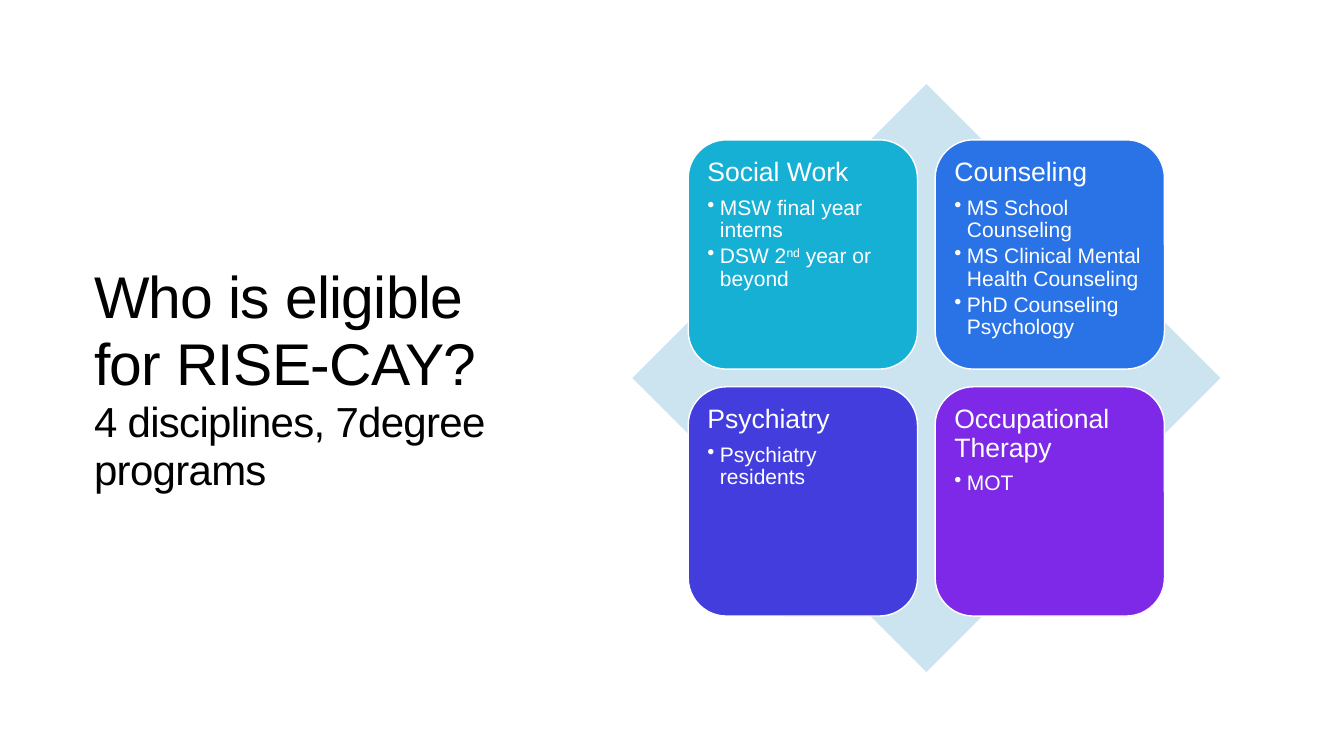
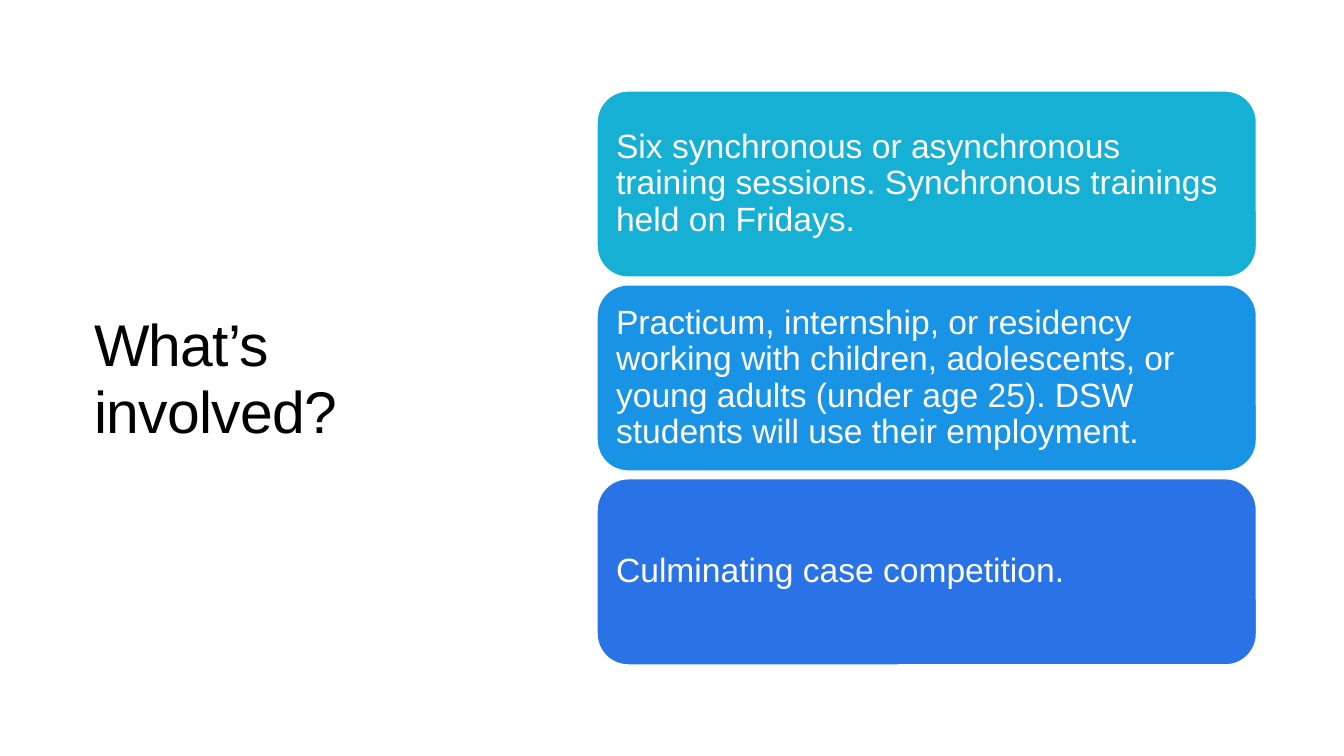
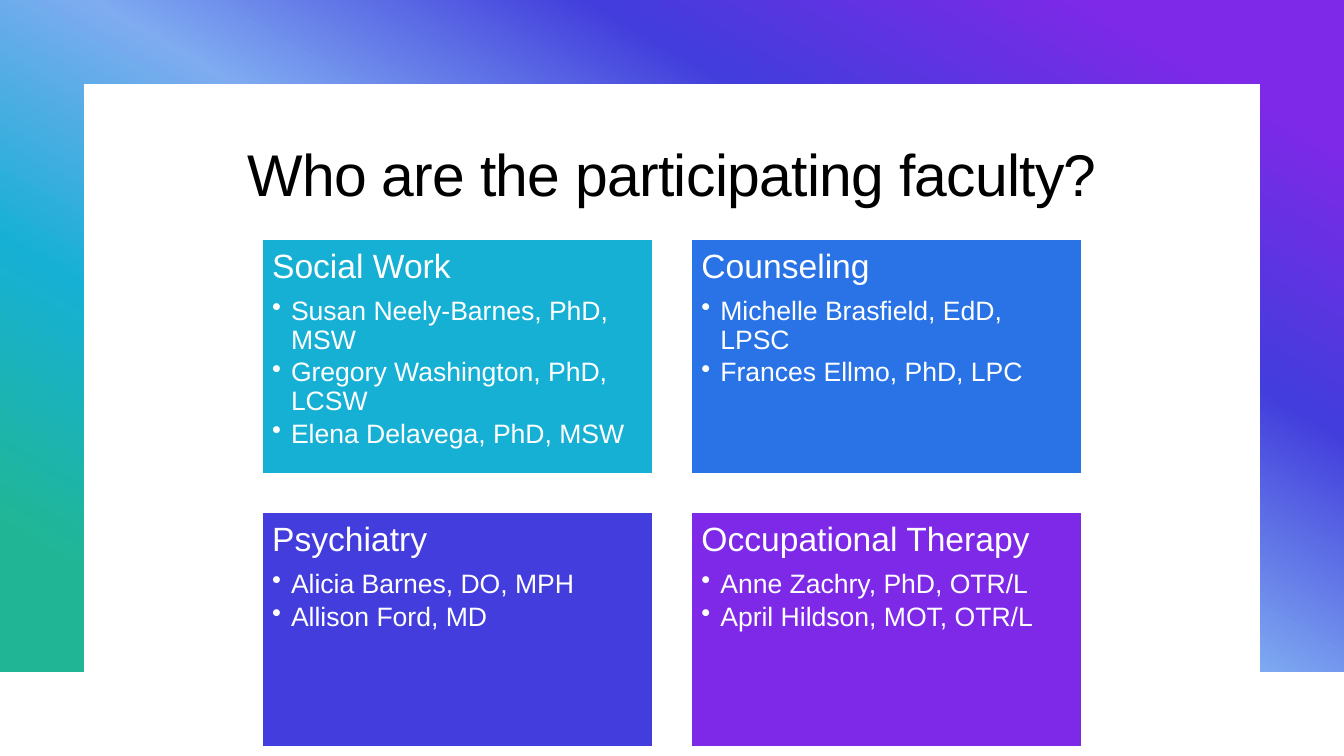
from copy import deepcopy

from pptx import Presentation
from pptx.dml.color import RGBColor
from pptx.enum import shapes, text
from pptx.oxml import ns
from pptx.util import Pt

WHITE = RGBColor(0xFF, 0xFF, 0xFF)
BLACK = RGBColor(0x00, 0x00, 0x00)
TEAL = RGBColor(0x17, 0xB0, 0xD5)
SKY = RGBColor(0x19, 0x93, 0xE5)
BLUE = RGBColor(0x29, 0x73, 0xE7)
INDIGO = RGBColor(0x42, 0x3D, 0xDC)
PURPLE = RGBColor(0x7E, 0x29, 0xE7)
PERIWINKLE = RGBColor(0x7F, 0xAB, 0xF1)
GREEN = RGBColor(0x20, 0xB6, 0x95)
PALE_BLUE = RGBColor(0xCC, 0xE4, 0xEF)

FONT = "Arial"
SLIDE_WIDTH, SLIDE_HEIGHT = 960, 540
SIDE_TITLE_BOX = (60, 61, 307.5, 420.5)
TOP_TITLE_BOX = (120, 89.5, 720, 72.5)
GRADIENT = [(0.1, PURPLE), (0.3, INDIGO), (0.5, PERIWINKLE), (0.7, TEAL), (0.9, GREEN)]

# Discipline, colour, eligible programs (^ marks superscript), faculty
DISCIPLINES = [
    ("Social Work", TEAL,
     ["MSW final year interns", "DSW 2^nd^ year or beyond"],
     ["Susan Neely-Barnes, PhD, MSW", "Gregory Washington, PhD, LCSW",
      "Elena Delavega, PhD, MSW"]),
    ("Counseling", BLUE,
     ["MS School Counseling", "MS Clinical Mental Health Counseling",
      "PhD Counseling Psychology"],
     ["Michelle Brasfield, EdD, LPSC", "Frances Ellmo, PhD, LPC"]),
    ("Psychiatry", INDIGO,
     ["Psychiatry residents"],
     ["Alicia Barnes, DO, MPH", "Allison Ford, MD"]),
    ("Occupational Therapy", PURPLE,
     ["MOT"],
     ["Anne Zachry, PhD, OTR/L", "April Hildson, MOT, OTR/L"]),
]

REQUIREMENTS = [
    ("Six synchronous or asynchronous training sessions. "
     "Synchronous trainings held on Fridays.", TEAL),
    ("Practicum, internship, or residency working with children, adolescents, "
     "or young adults (under age 25). DSW students will use their employment.", SKY),
    ("Culminating case competition.", BLUE),
]


def add_titled_slide(presentation):
    return presentation.slides.add_slide(presentation.slide_layouts[5])


def set_title(slide, box, heading, subtitle=None, alignment=text.PP_ALIGN.LEFT):
    """Place the title, with an optional smaller line under it."""
    title = slide.shapes.title
    title.left, title.top, title.width, title.height = map(Pt, box)
    frame = title.text_frame
    frame.word_wrap = True
    frame.auto_size = text.MSO_AUTO_SIZE.NONE
    frame.vertical_anchor = text.MSO_ANCHOR.MIDDLE
    paragraph = frame.paragraphs[0]
    paragraph.alignment = alignment
    paragraph.line_spacing = 0.95
    set_font(paragraph, 42, BLACK)
    paragraph._p.get_or_add_pPr().get_or_add_defRPr().set("spc", "-50")
    paragraph.add_run().text = heading
    if subtitle:
        paragraph.add_line_break()
        run = paragraph.add_run()
        run.text = subtitle
        run.font.size = Pt(30)
    for run in paragraph.runs:
        run._r.get_or_add_rPr().set("spc", "-50")


def set_font(paragraph, size, color):
    paragraph.font.name = FONT
    paragraph.font.size = Pt(size)
    paragraph.font.color.rgb = color


def add_box(slide, kind, box, fill=None, line=None):
    shape = slide.shapes.add_shape(kind, *map(Pt, box))
    shape.shadow.inherit = False
    if fill is not None:
        shape.fill.solid()
        shape.fill.fore_color.rgb = fill
    if line is None:
        shape.line.fill.background()
    else:
        shape.line.color.rgb = line
        shape.line.width = Pt(1)
    return shape


def fill_gradient(shape):
    shape.fill.gradient()
    shape.fill.gradient_angle = 240
    stop_list = shape.element.spPr.find(".//" + ns.qn("a:gsLst"))
    while len(stop_list) < len(GRADIENT):
        stop_list.append(deepcopy(stop_list[0]))
    for stop, (position, color) in zip(shape.fill.gradient_stops, GRADIENT):
        stop.position = position
        stop.color.rgb = color


def format_card_paragraph(paragraph, size, after):
    paragraph.alignment = text.PP_ALIGN.LEFT
    paragraph.line_spacing = 0.9
    paragraph.space_after = Pt(round(size * after, 2))
    set_font(paragraph, size, WHITE)


def add_bullet(frame, words, size, indent):
    paragraph = frame.add_paragraph()
    paragraph.level = 1
    format_card_paragraph(paragraph, size, 0.15)
    properties = paragraph._p.get_or_add_pPr()
    properties.set("marL", str(Pt(indent)))
    properties.set("indent", str(-Pt(indent)))
    bullet = properties.makeelement(ns.qn("a:buChar"), {"char": "•"})
    properties.find(ns.qn("a:defRPr")).addprevious(bullet)
    for index, part in enumerate(words.split("^")):
        run = paragraph.add_run()
        run.text = part
        if index % 2:
            run._r.get_or_add_rPr().set("baseline", "30000")


def add_card(slide, kind, box, color, heading, size, inset, anchor):
    """Draw one coloured card with its heading and return its text frame."""
    frame = add_box(slide, kind, box, color, WHITE).text_frame
    frame.word_wrap = True
    frame.vertical_anchor = anchor
    frame.margin_left = frame.margin_right = Pt(inset)
    frame.margin_top = frame.margin_bottom = Pt(inset)
    paragraph = frame.paragraphs[0]
    paragraph.text = heading
    format_card_paragraph(paragraph, size, 0.35)
    return frame


def add_card_grid(slide, kind, box, gap, cards, sizes, inset, indent):
    """Fill the box with two columns and two rows of bulleted cards."""
    left, top, width, height = box
    card_width, card_height = (width - gap) / 2, (height - gap) / 2
    heading_size, bullet_size = sizes
    for index, (heading, color, bullets) in enumerate(cards):
        row, column = divmod(index, 2)
        card_box = (left + column * (card_width + gap), top + row * (card_height + gap),
                    card_width, card_height)
        frame = add_card(slide, kind, card_box, color, heading, heading_size,
                         inset, text.MSO_ANCHOR.TOP)
        for bullet in bullets:
            add_bullet(frame, bullet, bullet_size, indent)


def add_matrix(slide, left, top, side):
    """Four rounded cards over a diamond."""
    add_box(slide, shapes.MSO_SHAPE.DIAMOND, (left, top, side, side), PALE_BLUE)
    margin = 0.095 * side
    grid_side = side - 2 * margin
    cards = [(name, color, programs) for name, color, programs, _ in DISCIPLINES]
    add_card_grid(slide, shapes.MSO_SHAPE.ROUNDED_RECTANGLE,
                  (left + margin, top + margin, grid_side, grid_side),
                  0.03 * side, cards, (19, 15), 5.7, 9)


def add_card_stack(slide, box, gap):
    """Full-width cards, one under another."""
    left, top, width, height = box
    count = len(REQUIREMENTS)
    card_height = (height - gap * (count - 1)) / count
    for index, (words, color) in enumerate(REQUIREMENTS):
        card_box = (left, top + index * (card_height + gap), width, card_height)
        add_card(slide, shapes.MSO_SHAPE.ROUNDED_RECTANGLE, card_box, color, words,
                 24, 7.2, text.MSO_ANCHOR.MIDDLE)


def add_gradient_frame(slide, band_height, margin):
    """Gradient band with a white panel inside."""
    band = add_box(slide, shapes.MSO_SHAPE.RECTANGLE, (0, 0, SLIDE_WIDTH, band_height))
    fill_gradient(band)
    panel = add_box(slide, shapes.MSO_SHAPE.RECTANGLE,
                    (margin, margin, SLIDE_WIDTH - 2 * margin, band_height - margin), WHITE)
    # Send both behind the title
    tree = slide.shapes.title.element.getparent()
    tree.insert(2, panel.element)
    tree.insert(2, band.element)


def build_eligibility(presentation):
    slide = add_titled_slide(presentation)
    set_title(slide, SIDE_TITLE_BOX, "Who is eligible for RISE-CAY?",
              "4 disciplines, 7degree programs")
    add_matrix(slide, 451.7, 60, 420)


def build_requirements(presentation):
    slide = add_titled_slide(presentation)
    set_title(slide, SIDE_TITLE_BOX, "What’s involved?")
    add_card_stack(slide, (426.5, 65, 471, 410), 5.5)


def build_faculty(presentation):
    slide = add_titled_slide(presentation)
    add_gradient_frame(slide, 480, 60)
    set_title(slide, TOP_TITLE_BOX, "Who are the participating faculty?",
              alignment=text.PP_ALIGN.CENTER)
    cards = [(name, color, faculty) for name, color, _, faculty in DISCIPLINES]
    add_card_grid(slide, shapes.MSO_SHAPE.RECTANGLE, (187.3, 171, 585.4, 362.4), 28,
                  cards, (24, 19), 7.2, 13.5)


def main():
    presentation = Presentation()
    presentation.slide_width = Pt(SLIDE_WIDTH)
    presentation.slide_height = Pt(SLIDE_HEIGHT)
    build_eligibility(presentation)
    build_requirements(presentation)
    build_faculty(presentation)
    presentation.save("out.pptx")


if __name__ == "__main__":
    main()
